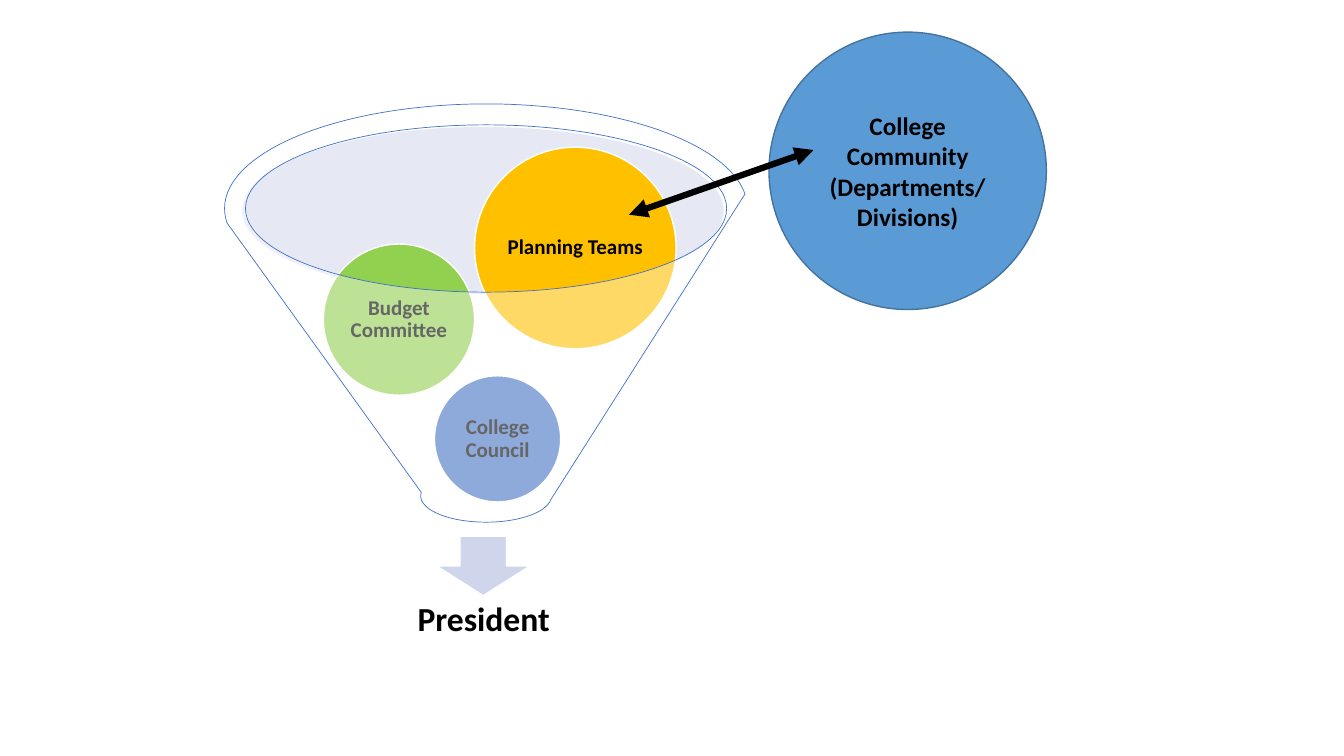
"""Build the planning funnel slide, from college teams to the President."""
import dataclasses

import pptx
import pptx.dml.color
import pptx.enum.shapes
import pptx.enum.text
import pptx.oxml.ns
import pptx.util
from lxml import etree

Cm = pptx.util.Cm
Pt = pptx.util.Pt
Kind = pptx.enum.shapes.MSO_SHAPE
qn = pptx.oxml.ns.qn


@dataclasses.dataclass(frozen=True)
class Theme:
    font: str = "Calibri"
    ink: str = "000000"
    white: str = "FFFFFF"
    rim: str = "C1C9E4"
    arrow: str = "CFD5EA"
    blue: str = "4472C4"
    green: str = "92D050"
    gold: str = "FFC000"
    sky: str = "5B9BD5"
    edge: str = "43739E"
    small: int = 15
    large: int = 18
    head: int = 24


THEME = Theme()


def paint(fill, color, alpha=None):
    fill.solid()
    fill.fore_color.rgb = pptx.dml.color.RGBColor.from_string(color)
    if alpha is not None:
        tone = fill._xPr.find(qn("a:solidFill"))[0]
        etree.SubElement(tone, qn("a:alpha"), val=str(alpha * 1000))


def write(shape, text, size=THEME.small, color=THEME.ink, bold=True,
          space=0.9, inset=None):
    frame = shape.text_frame
    frame.word_wrap = True
    frame.vertical_anchor = pptx.enum.text.MSO_ANCHOR.MIDDLE
    if inset is not None:
        frame.margin_left = frame.margin_right = Cm(inset)
        frame.margin_top = frame.margin_bottom = Cm(inset)
    frame.text = text
    for para in frame.paragraphs:
        para.alignment = pptx.enum.text.PP_ALIGN.CENTER
        para.line_spacing = space
        for run in para.runs:
            run.font.name = THEME.font
            run.font.size = Pt(size)
            run.font.bold = bold
            paint(run.font.fill, color)


def add_form(slide, kind, box, fill, alpha=None, line=None, width=1):
    shape = slide.shapes.add_shape(kind, *map(Cm, box))
    shape.shadow.inherit = False
    paint(shape.fill, fill, alpha)
    if line:
        paint(shape.line.fill, line)
        shape.line.width = Pt(width)
    else:
        shape.line.fill.background()
    return shape


def add_ball(slide, text, left, top, size, fill):
    ball = add_form(slide, Kind.OVAL, (left, top, size, size), fill,
                    line=THEME.white)
    write(ball, text, inset=0.05)


def add_link(slide, start, end, width):
    link = slide.shapes.add_connector(
        pptx.enum.shapes.MSO_CONNECTOR.STRAIGHT, *map(Cm, start + end))
    paint(link.line.fill, THEME.ink)
    link.line.width = Pt(width)
    props = link._element.spPr
    for tip in ("a:headEnd", "a:tailEnd"):
        etree.SubElement(props.find(qn("a:ln")), qn(tip), type="triangle")
    etree.SubElement(props, qn("a:effectLst"))


def main():
    deck = pptx.Presentation()
    deck.slide_width, deck.slide_height = Cm(33.87), Cm(19.05)
    slide = deck.slides.add_slide(deck.slide_layouts[6])

    add_form(slide, Kind.OVAL, (6.1, 3.2, 12.14, 4.22), THEME.rim, alpha=40)
    add_form(slide, Kind.DOWN_ARROW, (11, 13.51, 2.36, 1.5), THEME.arrow,
             line=THEME.white)
    label = slide.shapes.add_textbox(*map(Cm, (6.55, 14.22, 11.28, 2.82)))
    write(label, "President", size=THEME.head, inset=0.48)

    balls = (
        ("College Council", 10.95, 9.47, 3.18, THEME.blue),
        ("Budget Committee", 8.15, 6.15, 3.81, THEME.green),
        ("Planning Teams", 11.96, 3.71, 5.08, THEME.gold),
    )
    for ball in balls:
        add_ball(slide, *ball)
    add_form(slide, Kind.FUNNEL, (5.66, 2.62, 13.18, 10.54), THEME.white,
             alpha=40, line=THEME.blue, width=0.5)

    group = add_form(slide, Kind.FLOWCHART_CONNECTOR,
                     (19.38, 0.81, 6.99, 6.99), THEME.sky, line=THEME.edge)
    write(group, "College\nCommunity (Departments/\nDivisions)",
          size=THEME.large, space=1.0)
    add_link(slide, (15.85, 5.41), (20.5, 3.78), 4.5)
    deck.save("out.pptx")


if __name__ == "__main__":
    main()
